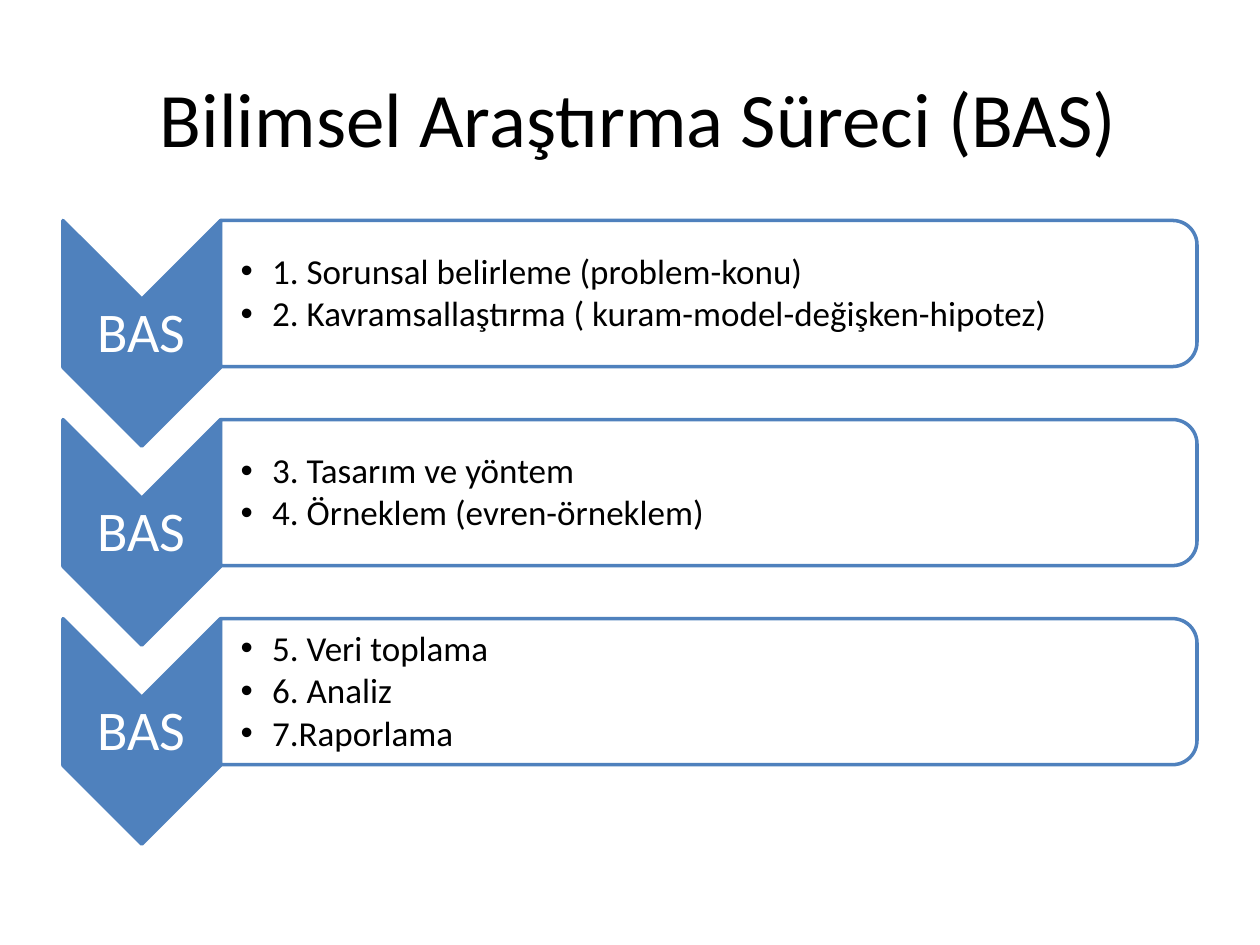
from dataclasses import dataclass

from lxml import etree
from pptx import Presentation
from pptx.dml.color import RGBColor
from pptx.enum.shapes import MSO_SHAPE
from pptx.enum.text import MSO_ANCHOR, PP_ALIGN
from pptx.oxml.ns import qn
from pptx.util import Inches, Pt

CHEVRON = MSO_SHAPE.CHEVRON
ROUNDED_END = MSO_SHAPE.ROUND_2_SAME_RECTANGLE
MIDDLE = MSO_ANCHOR.MIDDLE
CENTER = PP_ALIGN.CENTER
LEFT = PP_ALIGN.LEFT


@dataclass(frozen=True)
class Theme:
    font: str = "Calibri"
    accent: RGBColor = RGBColor(0x4F, 0x81, 0xBD)
    dark: RGBColor = RGBColor(0, 0, 0)
    light: RGBColor = RGBColor(0xFF, 0xFF, 0xFF)
    title_size: int = 44
    label_size: int = 32
    step_size: int = 20
    outline: int = 2
    panel_opacity: int = 90


@dataclass(frozen=True)
class Box:
    left: float
    top: float
    width: float
    height: float

    def lengths(self) -> list:
        return [Inches(v) for v in (self.left, self.top, self.width, self.height)]

    def before_quarter_turn(self) -> "Box":
        shift = (self.width - self.height) / 2
        return Box(self.left + shift, self.top - shift, self.height, self.width)


@dataclass(frozen=True)
class Stage:
    label: str
    steps: tuple[str, ...]


THEME = Theme()
STAGES = (
    Stage("BAS", ("1. Sorunsal belirleme (problem-konu)",
                  "2. Kavramsallaştırma ( kuram-model-değişken-hipotez)")),
    Stage("BAS", ("3. Tasarım ve yöntem", "4. Örneklem (evren-örneklem)")),
    Stage("BAS", ("5. Veri toplama", "6. Analiz", "7.Raporlama")),
)
FIRST_TOP = 1.75
STAGE_PITCH = 1.58


def add_run(paragraph, text: str, size: int, color: RGBColor) -> None:
    run = paragraph.add_run()
    run.text = text
    run.font.name = THEME.font
    run.font.size = Pt(size)
    run.font.color.rgb = color


def add_turned_shape(slide, preset, box: Box, fill: RGBColor):
    shape = slide.shapes.add_shape(preset, *box.before_quarter_turn().lengths())
    shape.rotation = 90
    shape.shadow.inherit = False
    shape.fill.solid()
    shape.fill.fore_color.rgb = fill
    shape.line.color.rgb = THEME.accent
    shape.line.width = Pt(THEME.outline)
    return shape


def set_opacity(shape, percent: int) -> None:
    color = shape.fill._xPr.find(qn("a:solidFill"))[0]
    etree.SubElement(color, qn("a:alpha"), val=str(percent * 1000))


def add_text_frame(slide, box: Box, left_inset: float, inset: float):
    frame = slide.shapes.add_textbox(*box.lengths()).text_frame
    frame.word_wrap = True
    frame.vertical_anchor = MIDDLE
    frame.margin_left = Inches(left_inset)
    frame.margin_top = frame.margin_right = frame.margin_bottom = Inches(inset)
    return frame


def add_bullet(paragraph) -> None:
    properties = paragraph._p.get_or_add_pPr()
    properties.set("marL", str(Inches(0.25)))
    properties.set("indent", str(Inches(-0.25)))
    etree.SubElement(properties, qn("a:buFont"), typeface="Arial")
    etree.SubElement(properties, qn("a:buChar"), char="•")


def add_label(slide, text: str, box: Box) -> None:
    paragraph = add_text_frame(slide, box, 0.02, 0.02).paragraphs[0]
    paragraph.alignment = CENTER
    paragraph.line_spacing = 0.9
    add_run(paragraph, text, THEME.label_size, THEME.light)


def add_steps(slide, steps: tuple[str, ...], box: Box) -> None:
    frame = add_text_frame(slide, box, 0.16, 0.01)
    for index, step in enumerate(steps):
        paragraph = frame.add_paragraph() if index else frame.paragraphs[0]
        paragraph.level = 1
        paragraph.alignment = LEFT
        paragraph.line_spacing = 0.9
        paragraph.space_after = Pt(2.6)
        add_bullet(paragraph)
        add_run(paragraph, step, THEME.step_size, THEME.dark)


def add_stage(slide, stage: Stage, top: float) -> None:
    add_turned_shape(slide, CHEVRON, Box(0.5, top, 1.25, 1.79), THEME.accent)
    add_label(slide, stage.label, Box(0.5, top + 0.63, 1.25, 0.54))
    panel = add_turned_shape(slide, ROUNDED_END, Box(1.75, top, 7.75, 1.16), THEME.light)
    set_opacity(panel, THEME.panel_opacity)
    add_steps(slide, stage.steps, Box(1.75, top + 0.06, 7.69, 1.05))


def add_title(slide, text: str) -> None:
    title = slide.shapes.title
    title.left, title.top, title.width, title.height = Box(0.5, 0.3, 9, 1.25).lengths()
    title.text_frame.vertical_anchor = MIDDLE
    paragraph = title.text_frame.paragraphs[0]
    paragraph.alignment = CENTER
    add_run(paragraph, text, THEME.title_size, THEME.dark)


def main() -> None:
    presentation = Presentation()
    presentation.slide_width = Inches(10)
    presentation.slide_height = Inches(7.5)
    slide = presentation.slides.add_slide(presentation.slide_layouts.get_by_name("Title Only"))
    add_title(slide, " Bilimsel Araştırma Süreci (BAS)")
    for index, stage in enumerate(STAGES):
        add_stage(slide, stage, FIRST_TOP + index * STAGE_PITCH)
    presentation.save("out.pptx")


if __name__ == "__main__":
    main()
